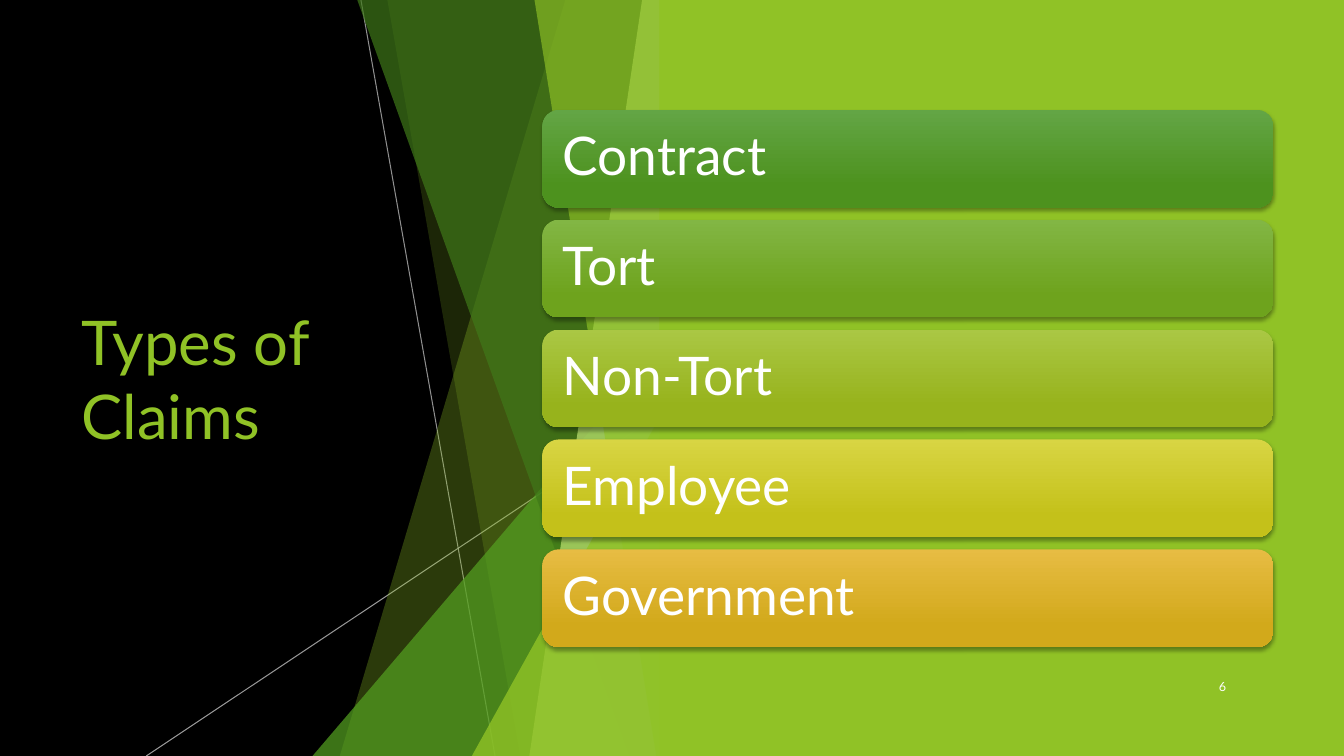
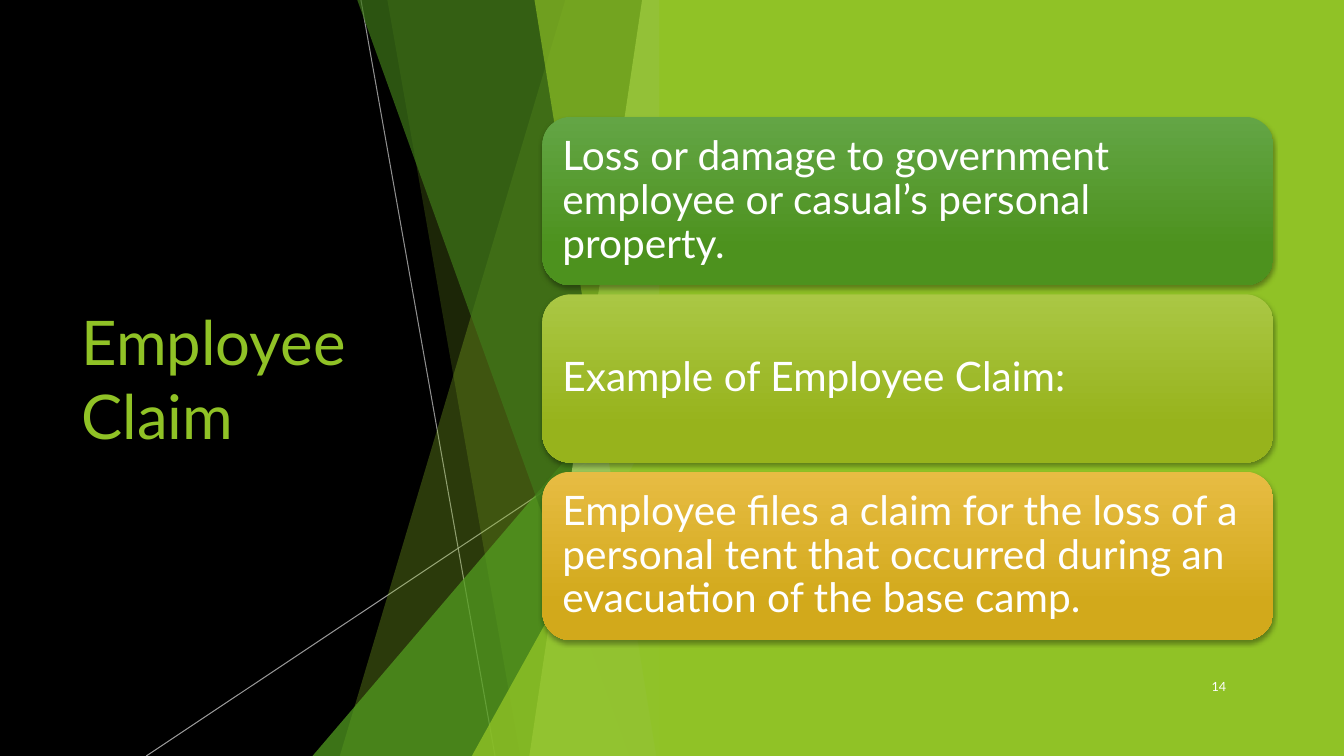
import pptx
import pptx.util
import pptx.dml.color
import pptx.enum.shapes
import pptx.enum.text
import pptx.oxml.ns
from lxml import etree

Inches = pptx.util.Inches
Pt = pptx.util.Pt
qn = pptx.oxml.ns.qn
KIND = pptx.enum.shapes.MSO_SHAPE
ALIGN = pptx.enum.text.PP_ALIGN

# Theme
LIME, WHITE, BLACK = "90C226", "FFFFFF", "000000"
FONT = "Lato"
HIGH, EDGE = 7.5, 6.66
LEFT, WIDE = 5.38, 7.25

# Gradient pairs for the cards
GREEN = ("63A545", "4D921E")
LEAF = ("82B644", "6EA31D")
OLIVE = ("AAC744", "97B31C")
YELLOW = ("D8D543", "C4C11A")
GOLD = ("E7BC43", "D2A91B")

# Thin lines: x1, y1, x2, y2, opacity
LINES = [(3.58, 0, 4.91, HIGH, 75), (EDGE, 4.03, 1.45, HIGH, 80)]

# Facets that end at EDGE: a band has top and bottom x,
# a wedge has left x and top y
FACETS = [
    ("band", 5.61, 3.37, LIME, 30),
    ("band", 3.84, 5.16, LIME, 20),
    ("wedge", 3.1, 3.33, "54A021", 72),
    ("band", 3.54, 6.24, "3F7819", 70),
    ("band", 6.37, 5.25, "C0E474", 70),
    ("band", 5.3, 6.51, LIME, 65),
    ("wedge", 4.68, 3.93, LIME, 80),
]

# Slides: title, number, first top, card height, step, text size, cards
SLIDES = [
    ("Types of Claims", "6", 1.09, 0.97, 1.09, 38, [
        ("Contract", GREEN),
        ("Tort", LEAF),
        ("Non-Tort", OLIVE),
        ("Employee", YELLOW),
        ("Government", GOLD),
    ]),
    ("Employee Claim", "14", 1.16, 1.67, 1.76, 29, [
        ("Loss or damage to government employee or casual’s personal "
         "property.", GREEN),
        ("Example of Employee Claim:", OLIVE),
        ("Employee files a claim for the loss of a personal tent that "
         "occurred during an evacuation of the base camp.", GOLD),
    ]),
]


def paint(tint, code, item=None, pct=100):
    """Set a colour; with an item, make its colour partly clear."""
    tint.rgb = pptx.dml.color.RGBColor.from_string(code)
    if item is not None:
        node = next(item._element.spPr.iter(qn("a:srgbClr")))
        etree.SubElement(node, qn("a:alpha"), val=str(pct * 1000))


def write(item, text, size, code=WHITE, align=ALIGN.LEFT, space=1.0, pad=0.1):
    frame = item.text_frame
    frame.word_wrap = True
    frame.vertical_anchor = pptx.enum.text.MSO_ANCHOR.MIDDLE
    frame.margin_left = frame.margin_right = Inches(pad)
    para = frame.paragraphs[0]
    para.alignment = align
    para.line_spacing = space
    run = para.add_run()
    run.text = text
    run.font.name = FONT
    run.font.size = Pt(size)
    paint(run.font.color, code)


deck = pptx.Presentation()
deck.slide_width, deck.slide_height = Inches(13.33), Inches(HIGH)

for title, number, first, tall, step, size, cards in SLIDES:
    slide = deck.slides.add_slide(deck.slide_layouts[6])
    shapes = slide.shapes
    back = slide.background.fill
    back.solid()
    paint(back.fore_color, BLACK)

    # Title
    box = shapes.add_textbox(Inches(0.71), Inches(1.51),
                             Inches(3.88), Inches(4.48))
    write(box, title, 44, LIME)

    # Thin lines
    for x1, y1, x2, y2, pct in LINES:
        line = shapes.add_connector(
            pptx.enum.shapes.MSO_CONNECTOR.STRAIGHT,
            Inches(x1), Inches(y1), Inches(x2), Inches(y2))
        line.line.width = Pt(0.75)
        paint(line.line.color, "BFBFBF", line, pct)
        etree.SubElement(line._element.spPr, qn("a:effectLst"))

    # Clear facets
    for kind, a, b, code, pct in FACETS:
        if kind == "band":
            pen = shapes.build_freeform(Inches(a), Inches(-0.01))
            pen.add_line_segments([
                (Inches(EDGE), Inches(-0.01)), (Inches(EDGE), Inches(HIGH)),
                (Inches(b), Inches(HIGH))])
            facet = pen.convert_to_shape()
        else:
            facet = shapes.add_shape(
                KIND.ISOSCELES_TRIANGLE, Inches(a), Inches(b),
                Inches(EDGE - a), Inches(HIGH - b))
            facet.adjustments[0] = 1
        facet.shadow.inherit = False
        facet.line.fill.background()
        facet.fill.solid()
        paint(facet.fill.fore_color, code, facet, pct)

    # Lime panel
    panel = shapes.add_shape(KIND.RECTANGLE, Inches(6.54), 0,
                             Inches(6.8), Inches(HIGH))
    panel.shadow.inherit = False
    panel.line.fill.background()
    panel.fill.solid()
    paint(panel.fill.fore_color, LIME)

    # Slide number
    box = shapes.add_textbox(Inches(11.51), Inches(6.61),
                             Inches(0.75), Inches(0.4))
    write(box, number, 9, align=ALIGN.RIGHT)

    # Cards
    for row, (text, pair) in enumerate(cards):
        card = shapes.add_shape(
            KIND.ROUNDED_RECTANGLE, Inches(LEFT), Inches(first + row * step),
            Inches(WIDE), Inches(tall))
        card.line.fill.background()
        card.fill.gradient()
        card.fill.gradient_angle = 270
        for stop, code, place in zip(card.fill.gradient_stops, pair, (0, 0.78)):
            stop.position = place
            paint(stop.color, code)
        # Rounded corners already push the text in by 5% of the height
        write(card, text, size, space=0.9, pad=0.2 - 0.05 * tall)

        # Soft shadow below
        card.shadow.inherit = False
        glow = etree.SubElement(
            card._element.spPr.find(qn("a:effectLst")), qn("a:outerShdw"),
            blurRad=str(Pt(3)), dist=str(Pt(2)), dir="5400000", rotWithShape="0")
        shade = etree.SubElement(glow, qn("a:srgbClr"), val=BLACK)
        etree.SubElement(shade, qn("a:alpha"), val="35000")

deck.save("out.pptx")
